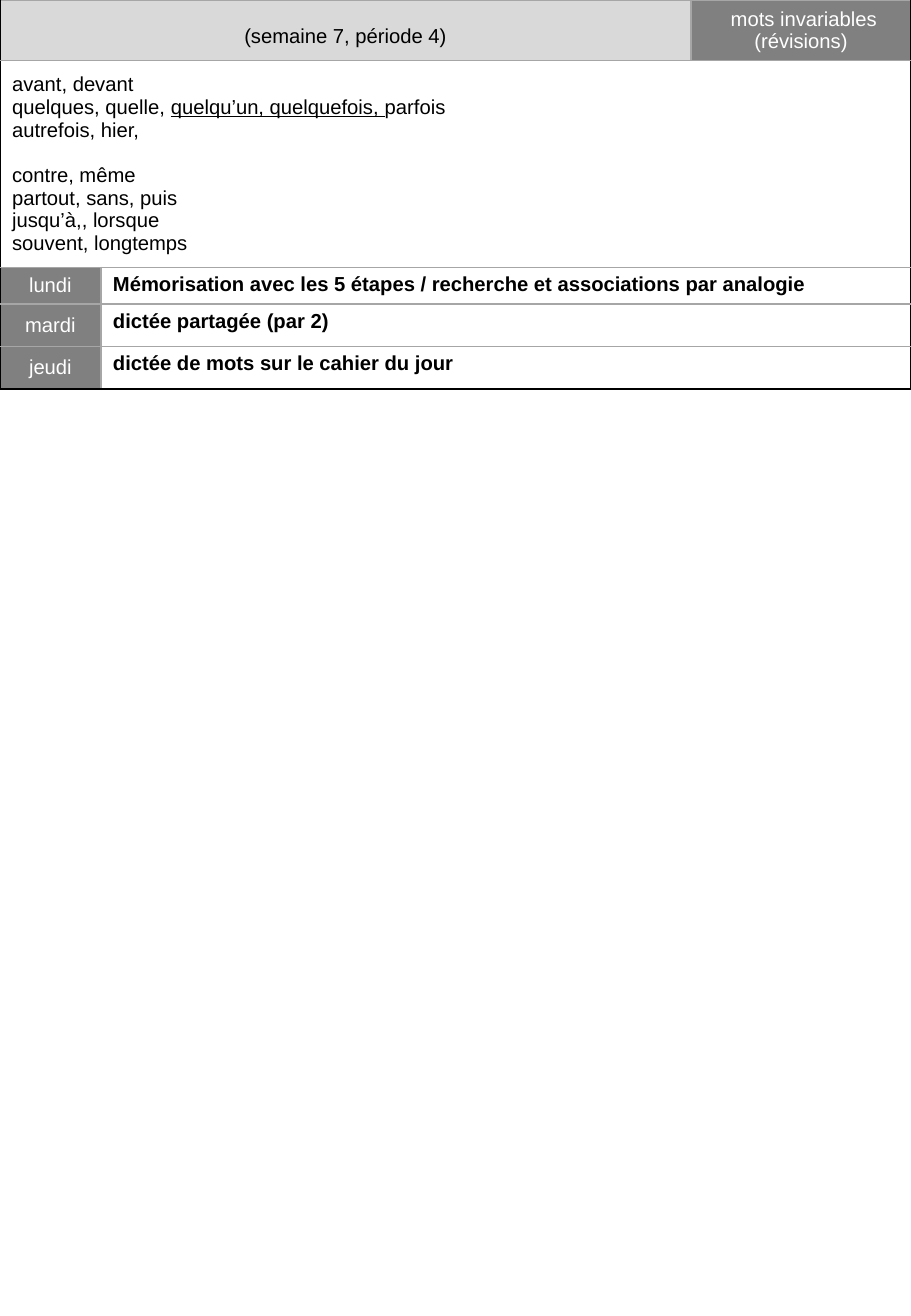
"""Build the weekly spelling plan: a word list and the activities of each day."""
import pptx
import pptx.dml.color
import pptx.enum.text
import pptx.oxml
import pptx.oxml.ns
import pptx.util
from pptx.util import Inches

BLACK, WHITE, DARK, LIGHT, RULE = "000000", "FFFFFF", "808080", "D9D9D9", "A6A6A6"
COLUMNS = [0.83, 4.86, 1.81]
ROWS = [0.5, 1.7, 0.3, 0.35, 0.35]
LAST_COLUMN, LAST_ROW = len(COLUMNS) - 1, len(ROWS) - 1
CENTER = pptx.enum.text.PP_ALIGN.CENTER
LEFT = pptx.enum.text.PP_ALIGN.LEFT
MIDDLE = pptx.enum.text.MSO_ANCHOR.MIDDLE
TOP = pptx.enum.text.MSO_ANCHOR.TOP
WORDS_BEFORE_GAP = ["autrefois, hier,"]
WORDS_AFTER_GAP = [
    "contre, même",
    "partout, sans, puis",
    "jusqu’à,, lorsque",
    "souvent, longtemps",
]
ACTIVITIES = [
    ("lundi", "Mémorisation avec les 5 étapes / recherche et associations par analogie"),
    ("mardi", "dictée partagée (par 2)"),
    ("jeudi", "dictée de mots sur le cahier du jour"),
]


def rgb(value):
    """Return the colour of a hex string."""
    return pptx.dml.color.RGBColor.from_string(value)


def add_border(cell, side, color):
    """Draw a one-point border on one side of a cell."""
    cell._tc.get_or_add_tcPr().append(pptx.oxml.parse_xml(
        f'<a:ln{side} {pptx.oxml.ns.nsdecls("a")} w="12700"><a:solidFill>'
        f'<a:srgbClr val="{color}"/></a:solidFill></a:ln{side}>'))


def add_cell(grid, row, first, last, fill, anchor):
    """Merge a row's columns into one cell, with black rules at the table's edges."""
    origin = grid.cell(row, first)
    if last > first:
        origin.merge(grid.cell(row, last))
    borders = {
        "L": BLACK if first == 0 else RULE,
        "R": BLACK if last == LAST_COLUMN else RULE,
        "T": RULE,
        "B": BLACK if row == LAST_ROW else RULE,
    }
    for column in range(first, last + 1):
        cell = grid.cell(row, column)
        for side, color in borders.items():
            add_border(cell, side, color)
        cell.fill.solid()
        cell.fill.fore_color.rgb = rgb(fill)
    origin.vertical_anchor = anchor
    return origin


def add_span(para, text, color, bold=False, underline=False):
    """Add one run of text to a paragraph."""
    span = para.add_run()
    span.text = text
    span.font.name = "Arial"
    span.font.size = pptx.util.Pt(12)
    span.font.bold = bold
    span.font.underline = underline
    span.font.color.rgb = rgb(color)


def add_lines(cell, lines, color=BLACK, align=LEFT, bold=False):
    """Fill a cell with one single-run paragraph per line and return them."""
    paras = []
    for index, text in enumerate(lines):
        frame = cell.text_frame
        para = frame.paragraphs[0] if index == 0 else frame.add_paragraph()
        para.alignment = align
        add_span(para, text, color, bold)
        paras.append(para)
    return paras


def add_heading(grid):
    """Add the week and the subject."""
    week = add_cell(grid, 0, 0, 1, LIGHT, MIDDLE)
    add_lines(week, ["(semaine 7, période 4)"], align=CENTER)[0].line_spacing = 1.5
    subject = add_cell(grid, 0, 2, 2, DARK, MIDDLE)
    title = subject.text_frame.paragraphs[0]
    title.alignment = CENTER
    add_span(title, " ", WHITE, bold=True)
    add_span(title, "mots invariables", WHITE)
    detail = subject.text_frame.add_paragraph()
    detail.alignment = CENTER
    add_span(detail, "(révisions)", WHITE)


def add_words(grid):
    """Add the words to learn, in two groups."""
    cell = add_cell(grid, 1, 0, LAST_COLUMN, WHITE, MIDDLE)
    lines = ["avant, devant", "quelques, quelle, "] + WORDS_BEFORE_GAP + WORDS_AFTER_GAP
    paras = add_lines(cell, lines)
    add_span(paras[1], "quelqu’un, quelquefois, ", BLACK, underline=True)
    add_span(paras[1], "parfois", BLACK)
    paras[-len(WORDS_AFTER_GAP)].space_before = pptx.util.Pt(13.5)


def add_activities(grid):
    """Add one row per day with its activity."""
    for row, (day, activity) in enumerate(ACTIVITIES, start=2):
        add_lines(add_cell(grid, row, 0, 0, DARK, MIDDLE), [day], WHITE, CENTER)
        add_lines(add_cell(grid, row, 1, LAST_COLUMN, WHITE, TOP), [activity], bold=True)


def add_grid(page):
    """Add the empty table with its column widths and row heights."""
    grid = page.shapes.add_table(
        len(ROWS), len(COLUMNS), 0, 0, Inches(sum(COLUMNS)), Inches(sum(ROWS))).table
    grid.first_row = False
    grid.horz_banding = False
    for column, width in zip(grid.columns, COLUMNS):
        column.width = Inches(width)
    for row, height in zip(grid.rows, ROWS):
        row.height = Inches(height)
    return grid


def main():
    """Create the deck and save it."""
    deck = pptx.Presentation()
    deck.slide_width, deck.slide_height = Inches(7.5), Inches(10.83)
    page = deck.slides.add_slide(deck.slide_layouts[6])
    grid = add_grid(page)
    add_heading(grid)
    add_words(grid)
    add_activities(grid)
    deck.save("out.pptx")


if __name__ == "__main__":
    main()
